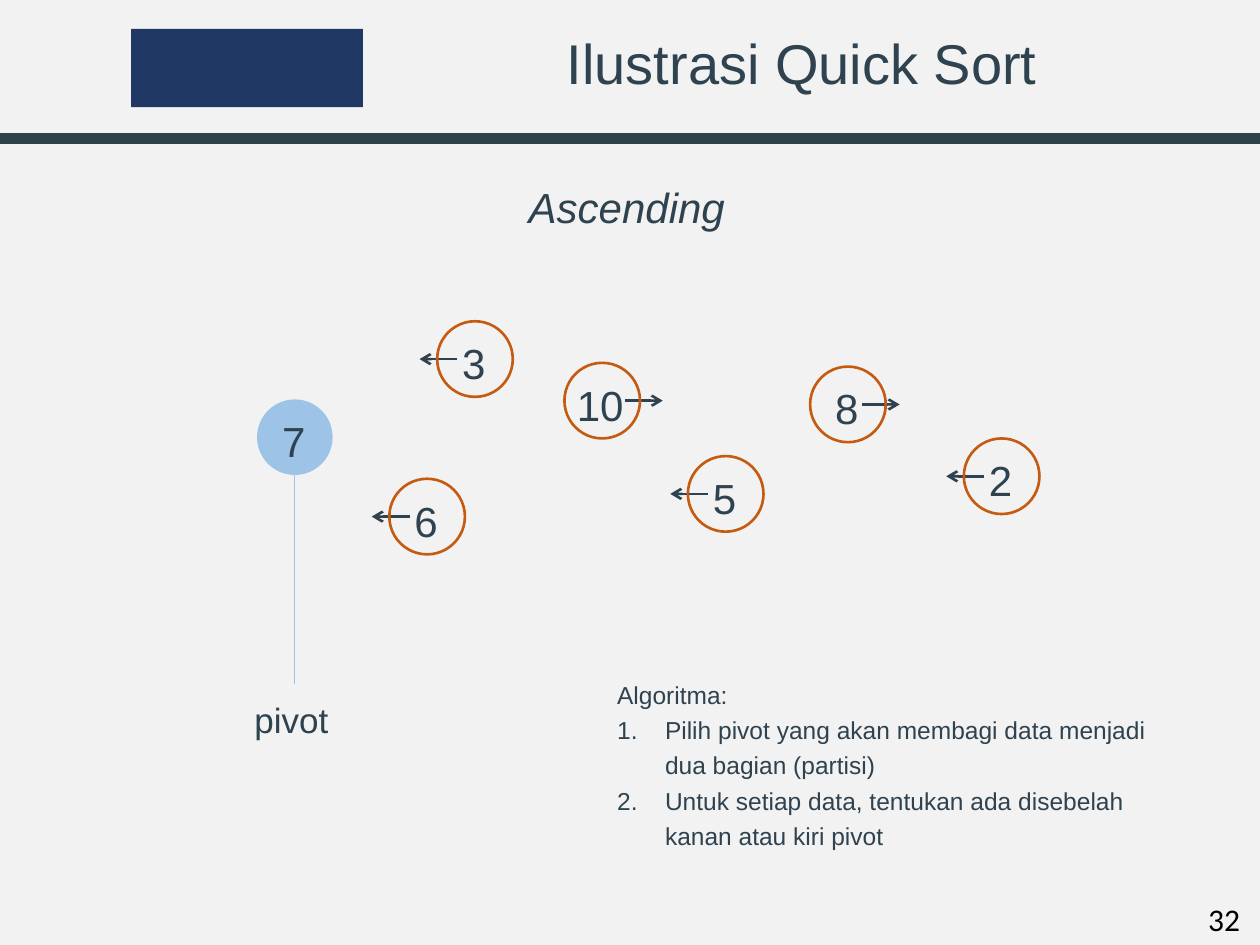
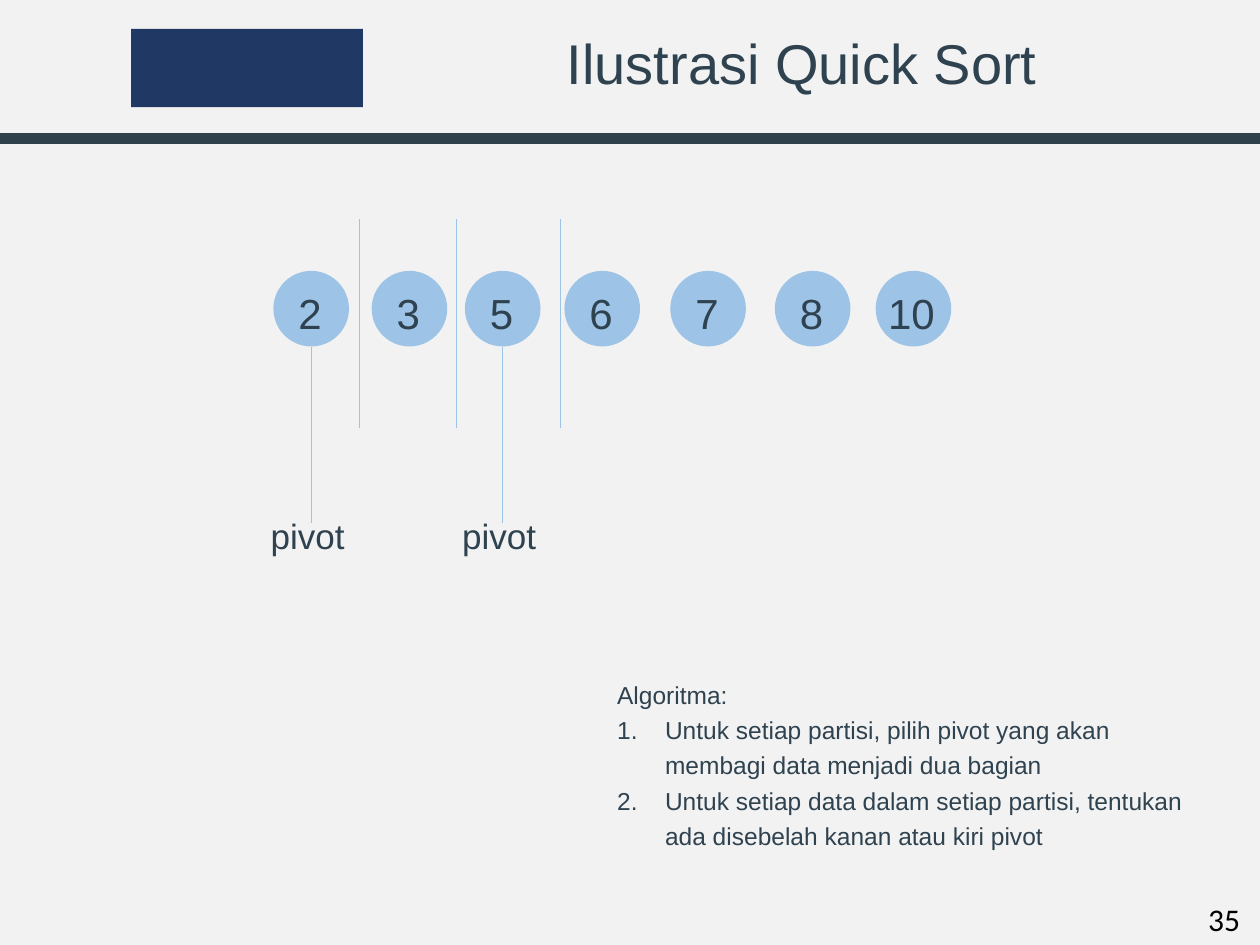
from lxml import etree
from pptx import Presentation
from pptx import util as u
from pptx.dml.color import RGBColor
from pptx.enum import shapes, text
from pptx.oxml import ns

SLATE = RGBColor(0x2F, 0x42, 0x4F)
RULE = RGBColor(0x2F, 0x42, 0x4C)
NAVY = RGBColor(0x20, 0x38, 0x64)
BLUE = RGBColor(0x9D, 0xC3, 0xE6)
ORANGE = RGBColor(0xC5, 0x5A, 0x11)
BLACK = RGBColor(0, 0, 0)
BACKGROUND = RGBColor(0xF2, 0xF2, 0xF2)

# The slide is a grid of 100 columns and 75 rows of square cells.
WIDTH, HEIGHT = u.Inches(10), u.Inches(7.5)
COLUMNS = 100
CELL = WIDTH / COLUMNS
BALL = 6
CENTER = text.PP_ALIGN.CENTER


def cells(*counts):
    return [round(CELL * count) for count in counts]


def add_xml(parent, tag, **attributes):
    return etree.SubElement(parent, ns.qn(tag), attributes)


def write(paragraph, words, size, color=SLATE, font="Arial", spacing=1.2,
          align=None, italic=None):
    paragraph.line_spacing = spacing
    paragraph.alignment = align
    run = paragraph.add_run()
    run.text = words
    run.font.size = u.Pt(size)
    run.font.name = font
    run.font.color.rgb = color
    run.font.italic = italic


def add_label(slide, area, words, size, wrap=True, **style):
    frame = slide.shapes.add_textbox(*cells(*area)).text_frame
    frame.word_wrap = wrap
    if not wrap:
        frame.auto_size = text.MSO_AUTO_SIZE.SHAPE_TO_FIT_TEXT
    write(frame.paragraphs[0], words, size, **style)
    return frame


def add_line(slide, start, end, color, weight, arrow=False):
    line = slide.shapes.add_connector(
        shapes.MSO_CONNECTOR.STRAIGHT, *cells(*start, *end))
    line.line.color.rgb = color
    line.line.width = u.Pt(weight)
    if arrow:
        add_xml(line.line._get_or_add_ln(), "a:tailEnd", type="arrow")
    add_xml(line._element.spPr, "a:effectLst")


def add_figure(slide, kind, area, fill=None, outline=None):
    figure = slide.shapes.add_shape(kind, *cells(*area))
    figure.shadow.inherit = False
    if fill is None:
        figure.fill.background()
    else:
        figure.fill.solid()
        figure.fill.fore_color.rgb = fill
    if outline is None:
        figure.line.fill.background()
    else:
        figure.line.color.rgb = outline
        figure.line.width = u.Pt(1.5)


def add_ball(slide, left, top, **colors):
    add_figure(slide, shapes.MSO_SHAPE.OVAL, (left, top, BALL, BALL), **colors)


def add_number(slide, left, top, value):
    """Two digits need a wider box that starts at the edge of the ball."""
    indent, width = (1, 4.3) if value < 10 else (0, 6.9)
    add_label(slide, (left + indent, top, width, BALL), str(value), 24)


def add_sorted_ball(slide, left, top, value):
    add_ball(slide, left, top, fill=BLUE)
    add_number(slide, left, top, value)


def add_moving_ball(slide, left, top, value, pivot):
    """Outlined number whose arrow shows its side of the pivot."""
    middle = top + BALL / 2
    if value < pivot:
        start, end = left + 1.6, left - 1.4
    else:
        start = left + (4.1 if value < 10 else 4.8)
        end = start + 3
    add_line(slide, (start, middle), (end, middle), SLATE, 1.5, arrow=True)
    add_number(slide, left, top, value)
    add_ball(slide, left, top, outline=ORANGE)


def add_pivot(slide, left, top, line_end, label_top):
    center = left + BALL / 2
    add_line(slide, (center, top + BALL), (center, line_end), BLUE, 0.5)
    add_label(slide, (left - 1.2, label_top, 8.4, 6), "pivot", 20)


def add_algorithm(slide, steps):
    frame = add_label(slide, (48, 53, 47.6, 15.8), "Algoritma:", 14)
    for step in steps:
        paragraph = frame.add_paragraph()
        indent = u.Inches(0.38)
        properties = paragraph._p.get_or_add_pPr()
        properties.set("marL", str(indent))
        properties.set("indent", str(-indent))
        add_xml(properties, "a:buFont", typeface="+mj-lt")
        add_xml(properties, "a:buAutoNum", type="arabicPeriod")
        write(paragraph, step, 14)


def add_base_slide(deck, number):
    slide = deck.slides.add_slide(deck.slide_layouts[6])
    slide.background.fill.solid()
    slide.background.fill.fore_color.rgb = BACKGROUND
    add_label(slide, (94.9, 70.9, 5, 4), str(number), 18, wrap=False,
              color=BLACK, font="Calibri", spacing=1.0)
    add_figure(slide, shapes.MSO_SHAPE.RECTANGLE, (10.4, 2.3, 18.4, 6.2),
               fill=NAVY)
    add_line(slide, (0, 11), (COLUMNS, 11), RULE, 6)
    title = add_label(slide, (32.4, 2.3, 62.5, 6), "Ilustrasi Quick Sort",
                      32, spacing=0.9, align=CENTER)
    title.vertical_anchor = text.MSO_ANCHOR.MIDDLE
    return slide


def build_partition_slide(deck):
    slide = add_base_slide(deck, 32)
    add_label(slide, (4.6, 13.1, 90.3, 5.4), "Ascending", 24,
              align=CENTER, italic=True)
    pivot = 7
    add_sorted_ball(slide, 20.4, 31.7, pivot)
    add_pivot(slide, 20.4, 31.7, line_end=54.3, label_top=54.3)
    for left, top, value in [(34.7, 25.5, 3), (44.8, 28.8, 10),
                             (64.3, 29.1, 8), (76.5, 34.8, 2),
                             (54.6, 36.2, 5), (30.9, 38, 6)]:
        add_moving_ball(slide, left, top, value, pivot)
    add_algorithm(slide, [
        "Pilih pivot yang akan membagi data menjadi dua bagian (partisi)",
        "Untuk setiap data, tentukan ada disebelah kanan atau kiri pivot"])


def build_sorted_slide(deck):
    slide = add_base_slide(deck, 35)
    row = 21.5
    lefts = {2: 21.7, 3: 29.5, 5: 36.9, 6: 44.8, 7: 53.2, 8: 61.5, 10: 69.5}
    for value, left in lefts.items():
        add_sorted_ball(slide, left, row, value)
    for pivot in (2, 5):
        add_pivot(slide, lefts[pivot], row, line_end=41.5, label_top=39.7)
    for divider in (28.5, 36.2, 44.5):
        add_line(slide, (divider, 17.4), (divider, 34), BLUE, 0.5)
    add_algorithm(slide, [
        "Untuk setiap partisi, pilih pivot yang akan membagi data menjadi "
        "dua bagian",
        "Untuk setiap data dalam setiap partisi, tentukan ada disebelah "
        "kanan atau kiri pivot"])


def main():
    deck = Presentation()
    deck.slide_width, deck.slide_height = WIDTH, HEIGHT
    build_partition_slide(deck)
    build_sorted_slide(deck)
    deck.save("out.pptx")


if __name__ == "__main__":
    main()
